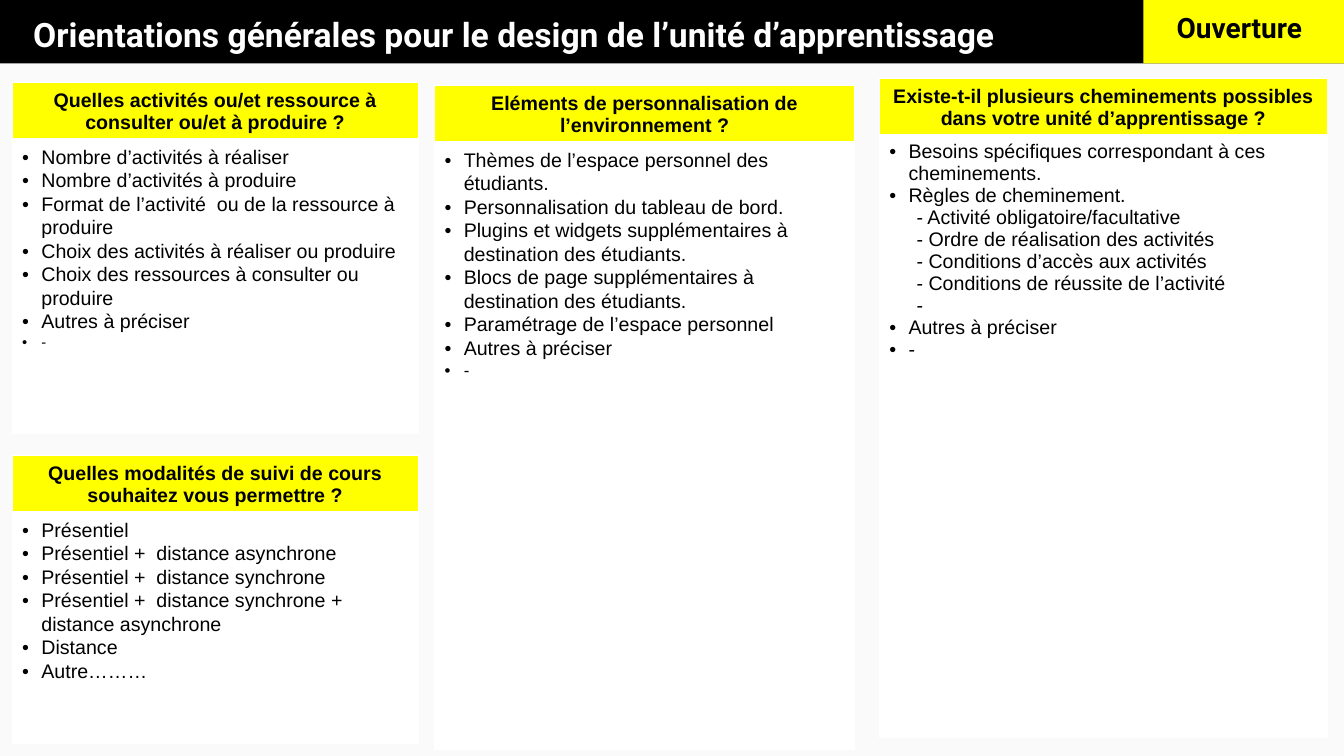
from lxml import etree
from pptx import Presentation
from pptx.dml.color import RGBColor
from pptx.enum.shapes import MSO_SHAPE
from pptx.enum.text import MSO_ANCHOR, PP_ALIGN
from pptx.oxml.ns import qn
from pptx.util import Inches, Pt

RECTANGLE = MSO_SHAPE.RECTANGLE
MIDDLE, TOP = MSO_ANCHOR.MIDDLE, MSO_ANCHOR.TOP
CENTER, LEFT = PP_ALIGN.CENTER, PP_ALIGN.LEFT

COLORS = {"black": "000000", "white": "FFFFFF", "yellow": "FFFF00", "page": "FAFAFA"}
WIDTH, HEIGHT = Inches(13.33), Inches(7.5)
HEADER_ROW, TAIL_ROW = Inches(0.55), Inches(0.4)
HANG, SUB_INDENT = Inches(0.19), Inches(0.27)

BANNER_FONT = {"name": "Roboto", "size": Pt(24), "bold": True}
TAG_FONT = {"name": "Roboto", "size": Pt(20), "bold": True}
HEADING_FONT = {"name": "Arial", "size": Pt(14), "bold": True}
BODY_FONT = {"name": "Arial", "size": Pt(14), "bold": False}

# Each panel: box in percent of the page, heading, line spacing,
# size of the last item, items (those starting with "- " are sub-items)
PANELS = [
    ((0.9, 10.93, 30.23, 46.13),
     "Quelles activités ou/et ressource à consulter ou/et à produire ?", 1.07, 10.5,
     ["Nombre d’activités à réaliser",
      "Nombre d’activités à produire",
      "Format de l’activité  ou de la ressource à produire",
      "Choix des activités à réaliser ou produire",
      "Choix des ressources à consulter ou  produire",
      "Autres à préciser",
      "-"]),
    ((0.9, 60.27, 30.23, 37.87),
     "Quelles modalités de suivi de cours souhaitez vous permettre ?", 1.07, 14,
     ["Présentiel",
      "Présentiel +  distance asynchrone",
      "Présentiel +  distance synchrone",
      "Présentiel +  distance synchrone + distance asynchrone",
      "Distance",
      "Autre………"]),
    ((32.33, 11.33, 31.28, 87.6),
     "Eléments de personnalisation de l’environnement ?", 1.07, 12,
     ["Thèmes de l’espace personnel des étudiants.",
      "Personnalisation du tableau de bord.",
      "Plugins et widgets supplémentaires à destination des étudiants.",
      "Blocs de page supplémentaires à destination des étudiants.",
      "Paramétrage de l’espace personnel",
      "Autres à préciser",
      "-"]),
    ((65.42, 10.4, 33.38, 86.93),
     "Existe-t-il plusieurs cheminements possibles dans votre unité d’apprentissage ?", 1.0, 14,
     ["Besoins spécifiques correspondant à ces cheminements.",
      "Règles de cheminement.",
      "- Activité obligatoire/facultative",
      "- Ordre de réalisation des activités",
      "- Conditions d’accès aux activités",
      "- Conditions de réussite de l’activité",
      "- ",
      "Autres à préciser",
      "-"]),
]


def color(name):
    return RGBColor.from_string(COLORS[name])


def part(box, shares):
    """Box inside another one, from percent shares."""
    left, top, width, height = box
    across, down, wide, high = (share / 100 for share in shares)
    return (int(left + across * width), int(top + down * height),
            int(wide * width), int(high * height))


def write(para, text, font, ink="black", align=LEFT):
    para.alignment = align
    span = para.add_run()
    span.text = text
    for key, value in font.items():
        setattr(span.font, key, value)
    span.font.color.rgb = color(ink)


def add_bullet(para):
    props = para._p.get_or_add_pPr()
    props.set("marL", str(HANG))
    props.set("indent", str(-HANG))
    shade = etree.SubElement(props, qn("a:buClr"))
    etree.SubElement(shade, qn("a:srgbClr"), val=COLORS["black"])
    etree.SubElement(props, qn("a:buFont"), typeface="Arial")
    etree.SubElement(props, qn("a:buChar"), char="•")


def style_cell(cell, fill, anchor, bottom_width):
    cell.fill.solid()
    cell.fill.fore_color.rgb = color(fill)
    cell.vertical_anchor = anchor
    props = cell._tc.get_or_add_tcPr()
    widths = {"lnL": 1, "lnR": 1, "lnT": 1, "lnB": bottom_width}
    for place, (side, width) in enumerate(widths.items()):
        line = etree.Element(qn(f"a:{side}"), w=str(Pt(width)))
        paint = etree.SubElement(line, qn("a:solidFill"))
        etree.SubElement(paint, qn("a:srgbClr"), val=COLORS["white"])
        props.insert(place, line)


def add_bar(page, box, fill, text, text_shares, font, ink):
    """Filled rectangle with a text box placed inside it."""
    bar = page.shapes.add_shape(RECTANGLE, *box)
    bar.shadow.inherit = False
    bar.fill.solid()
    bar.fill.fore_color.rgb = color(fill)
    bar.line.fill.background()
    label = page.shapes.add_textbox(*part(box, text_shares))
    label.text_frame.word_wrap = True
    write(label.text_frame.paragraphs[0], text, font, ink)


def add_panel(page, box, heading, spacing, last_size, items):
    """Table with a yellow heading, a list and an empty closing row."""
    table = page.shapes.add_table(3, 1, *box).table
    heights = (HEADER_ROW, box[3] - HEADER_ROW - TAIL_ROW, TAIL_ROW)
    looks = (("yellow", MIDDLE, 3), ("white", TOP, 1), ("white", TOP, 1))
    for index, (height, look) in enumerate(zip(heights, looks)):
        table.rows[index].height = height
        style_cell(table.cell(index, 0), *look)

    write(table.cell(0, 0).text_frame.paragraphs[0], heading, HEADING_FONT, align=CENTER)

    frame = table.cell(1, 0).text_frame
    for index, item in enumerate(items):
        para = frame.add_paragraph() if index else frame.paragraphs[0]
        para.line_spacing = spacing
        if item.startswith("- "):
            para._p.get_or_add_pPr().set("marL", str(SUB_INDENT))
        else:
            add_bullet(para)
        size = last_size if index == len(items) - 1 else 14
        write(para, item.strip(), {**BODY_FONT, "size": Pt(size)})


def main():
    deck = Presentation()
    deck.slide_width, deck.slide_height = WIDTH, HEIGHT
    page = deck.slides.add_slide(deck.slide_layouts[6])
    page.background.fill.solid()
    page.background.fill.fore_color.rgb = color("page")
    whole = (0, 0, WIDTH, HEIGHT)

    # Title banner and phase tag
    add_bar(page, part(whole, (0, 0, 100, 8.4)), "black",
            "Orientations générales pour le design de l’unité d’apprentissage",
            (1.73, 14, 79.5, 79), BANNER_FONT, "white")
    add_bar(page, part(whole, (85.07, 0, 14.93, 8.4)), "yellow",
            "Ouverture", (11.6, 9.5, 88.4, 70), TAG_FONT, "black")

    # Question panels
    for shares, *content in PANELS:
        add_panel(page, part(whole, shares), *content)

    deck.save("out.pptx")


if __name__ == "__main__":
    main()
